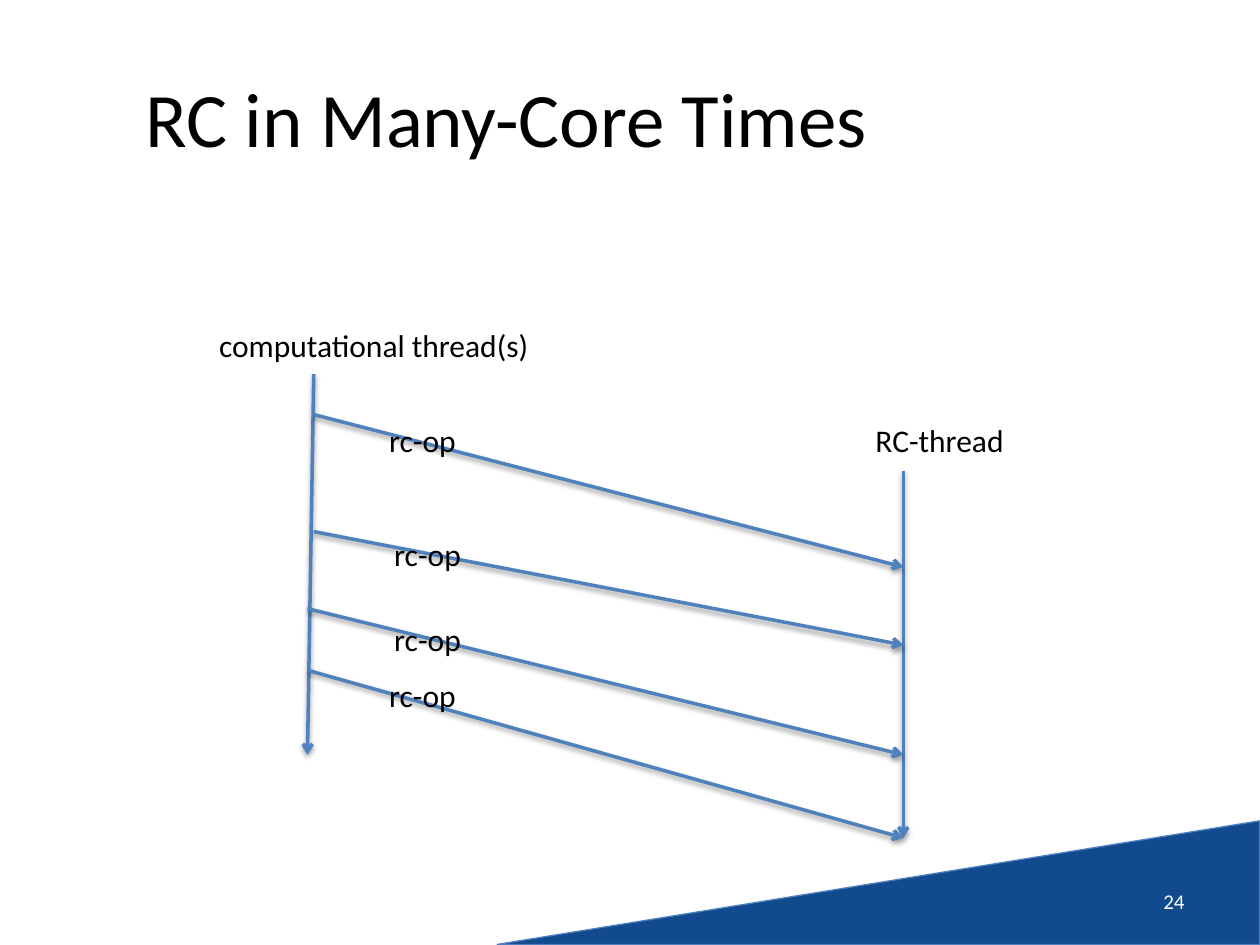
from lxml import etree
from pptx import Presentation
from pptx.dml.color import RGBColor
from pptx.enum import shapes, text
from pptx.oxml.ns import qn
from pptx.util import Pt

BLACK = RGBColor(0x00, 0x00, 0x00)
WHITE = RGBColor(0xFF, 0xFF, 0xFF)
ARROW_BLUE = RGBColor(0x4F, 0x81, 0xBD)
WEDGE_BLUE = RGBColor(0x11, 0x4B, 0x8E)
WEDGE_EDGE = RGBColor(0x4B, 0x7E, 0xBC)

# Content: text with box (left, top, width, height), arrows as (x1, y1, x2, y2)
TITLE = ("RC in Many-Core Times", (36, 21.6, 506.9, 90))
PAGE_NUMBER = ("24", (516, 500.4, 168, 28.8))
THREADS = [
    ("computational thread(s)", (118.1, 182.9, 193, 28.8), (179.3, 213.8, 175.7, 431.3)),
    ("RC-thread", (493.2, 236.9, 88.6, 28.8), (516.2, 269.3, 516.2, 478.8)),
]
RC_LABEL = "rc-op"
RC_LABEL_SIZE = (53.3, 28.8)
RC_THREAD_X = 516.2
# Each operation: (start x, start y, end y), label (left, top)
RC_OPS = [
    ((179.3, 236.9, 324), (215.3, 236.9)),
    ((179.3, 303.8, 368.6), (218.2, 302.4)),
    ((175.7, 347.8, 431.3), (218.2, 350.6)),
    ((175.7, 383, 478.8), (215.3, 383)),
]
WEDGE_BOX = (466.6, 286.6, 70.6, 435.6)


def add_shadow(shape, distance, opacity):
    effects = etree.SubElement(shape._element.spPr, qn("a:effectLst"))
    shadow = etree.SubElement(
        effects, qn("a:outerShdw"), blurRad=str(Pt(3.1)),
        dist=str(Pt(distance)), dir="5400000", rotWithShape="0")
    color = etree.SubElement(shadow, qn("a:srgbClr"), val="000000")
    etree.SubElement(color, qn("a:alpha"), val=str(opacity * 1000))


def add_text(slide, words, box, size=18, color=BLACK, align=text.PP_ALIGN.LEFT,
             anchor=text.MSO_ANCHOR.TOP, wrap=False):
    frame = slide.shapes.add_textbox(*map(Pt, box)).text_frame
    frame.word_wrap = wrap
    frame.vertical_anchor = anchor
    if not wrap:
        frame.auto_size = text.MSO_AUTO_SIZE.SHAPE_TO_FIT_TEXT
    paragraph = frame.paragraphs[0]
    paragraph.alignment = align
    run = paragraph.add_run()
    run.text = words
    for name, value in {"name": "Calibri", "size": Pt(size)}.items():
        setattr(run.font, name, value)
    run.font.color.rgb = color


def add_arrow(slide, ends):
    arrow = slide.shapes.add_connector(shapes.MSO_CONNECTOR.STRAIGHT, *map(Pt, ends))
    arrow.line.color.rgb = ARROW_BLUE
    arrow.line.width = Pt(2)
    etree.SubElement(arrow.line._get_or_add_ln(), qn("a:tailEnd"), type="arrow")
    add_shadow(arrow, 1.6, 38)


def main():
    deck = Presentation()
    deck.slide_width, deck.slide_height = Pt(720), Pt(540)
    slide = deck.slides.add_slide(deck.slide_layouts[6])

    # Corner wedge
    wedge = slide.shapes.add_shape(shapes.MSO_SHAPE.RIGHT_TRIANGLE, *map(Pt, WEDGE_BOX))
    wedge.rotation = 270
    wedge.fill.solid()
    wedge.fill.fore_color.rgb = WEDGE_BLUE
    wedge.line.color.rgb = WEDGE_EDGE
    wedge.line.width = Pt(0.75)
    add_shadow(wedge, 1.8, 35)

    # Title and page number
    middle = text.MSO_ANCHOR.MIDDLE
    add_text(slide, *TITLE, size=44, align=text.PP_ALIGN.CENTER, anchor=middle, wrap=True)
    add_text(slide, *PAGE_NUMBER, size=12, color=WHITE, align=text.PP_ALIGN.RIGHT,
             anchor=middle, wrap=True)

    # Thread timelines
    for name, box, timeline in THREADS:
        add_arrow(slide, timeline)
        add_text(slide, name, box)

    # Operations sent to the RC thread, with labels on top
    for (x, start_y, end_y), _ in RC_OPS:
        add_arrow(slide, (x, start_y, RC_THREAD_X, end_y))
    for _, corner in RC_OPS:
        add_text(slide, RC_LABEL, corner + RC_LABEL_SIZE)

    deck.save("out.pptx")


if __name__ == "__main__":
    main()
